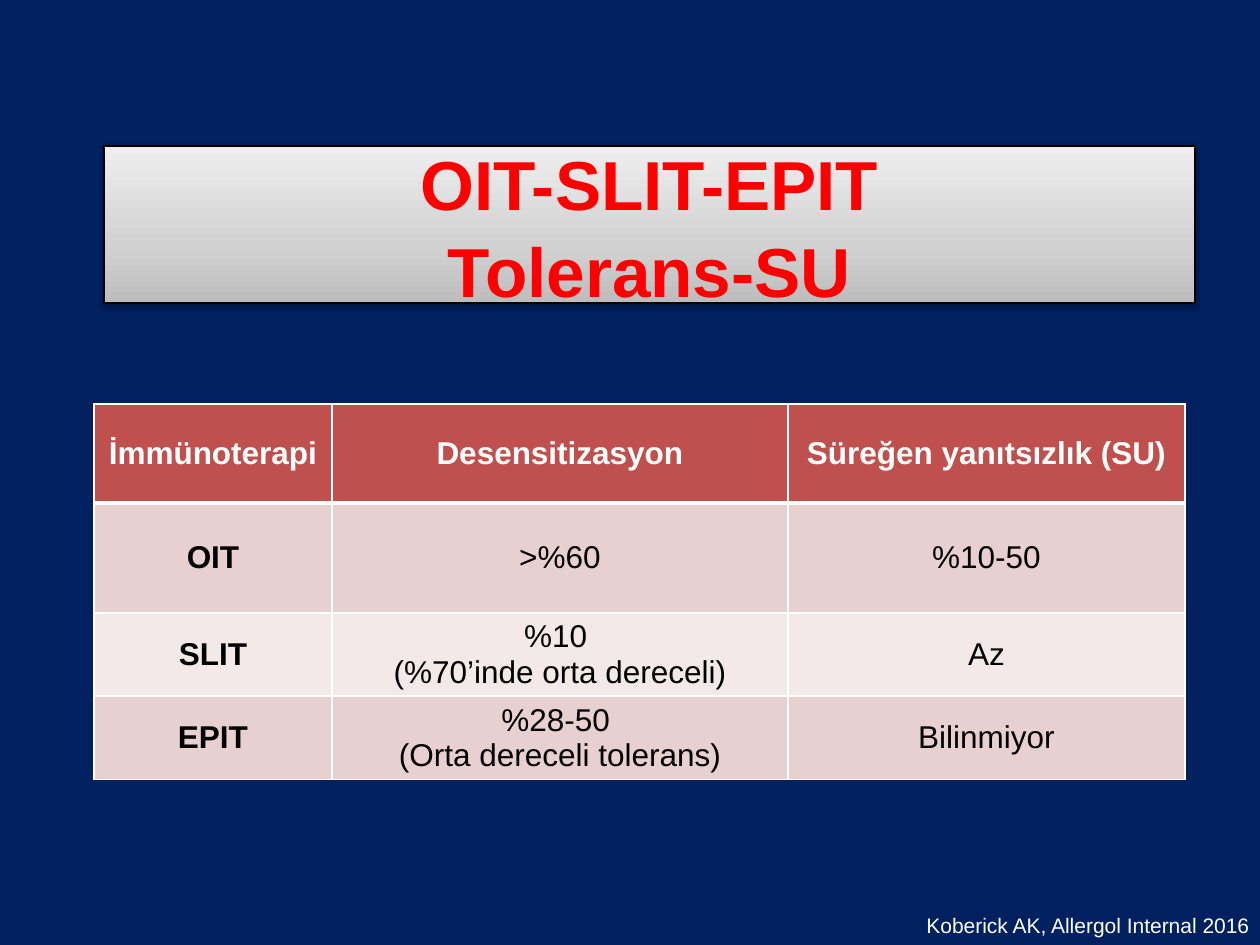
"""Build the slide on tolerance after OIT, SLIT and EPIT."""
import lxml.etree
import pptx
import pptx.dml.color
import pptx.enum.text
import pptx.oxml
import pptx.oxml.ns
import pptx.util

PX = 914400 // 126
CENTER = pptx.enum.text.PP_ALIGN.CENTER
MIDDLE = pptx.enum.text.MSO_ANCHOR.MIDDLE
WHITE, BLACK, RED, NAVY = "FFFFFF", "000000", "FF0000", "002060"
HEADER, BAND, LIGHT_BAND = "C0504D", "E8D0D0", "F4E9E9"


def color(value):
    return pptx.dml.color.RGBColor.from_string(value)


def element(tag, body="", **attributes):
    node = pptx.oxml.parse_xml(
        f"<a:{tag} {pptx.oxml.ns.nsdecls('a')}>{body}</a:{tag}>")
    for key, value in attributes.items():
        node.set(key, str(value))
    return node


def color_xml(value, inner=""):
    return f'<a:srgbClr val="{value}">{inner}</a:srgbClr>'


class Deck:
    def __init__(self, font, background):
        self.font = font
        self.presentation = pptx.Presentation()
        self.presentation.slide_width = pptx.util.Inches(10)
        self.presentation.slide_height = pptx.util.Inches(7.5)
        layout = self.presentation.slide_layouts[5]
        self.slide = self.presentation.slides.add_slide(layout)
        self.slide.background.fill.solid()
        self.slide.background.fill.fore_color.rgb = color(background)

    def set_text(self, frame, text, size, ink, bold=False, align=None):
        frame.text = text
        for paragraph in frame.paragraphs:
            paragraph.alignment = align
            font = paragraph.font
            font.name, font.size, font.bold = self.font, pptx.util.Pt(size), bold
            font.color.rgb = color(ink)

    def title(self, text, left, top, width, height, stops):
        banner = self.slide.shapes.title
        banner.left, banner.top = left * PX, top * PX
        banner.width, banner.height = width * PX, height * PX
        banner.fill.gradient()
        banner.fill.gradient_angle = 90
        stop_list = banner._element.spPr.find(".//" + pptx.oxml.ns.qn("a:gsLst"))
        stop_list[:] = [element("gs", color_xml(shade), pos=percent * 1000)
                        for percent, shade in stops]
        banner.line.color.rgb = color(BLACK)
        banner.line.width = pptx.util.Pt(0.75)
        shadow = color_xml(BLACK, '<a:alpha val="38000"/>')
        banner._element.spPr.append(element(
            "effectLst",
            f'<a:outerShdw blurRad="{pptx.util.Pt(3.1)}" dist="{pptx.util.Pt(1.6)}" '
            f'dir="5400000" rotWithShape="0">{shadow}</a:outerShdw>'))
        frame = banner.text_frame
        self.set_text(frame, text, 39.6, RED, bold=True, align=CENTER)
        frame.paragraphs[0].line_spacing = 1.04
        frame.vertical_anchor = MIDDLE
        frame.auto_size = pptx.enum.text.MSO_AUTO_SIZE.NONE

    def borders(self, cell, row):
        weights = {"L": 1, "R": 1, "T": 3 if row == 1 else 1, "B": 3 if row == 0 else 1}
        properties = cell._tc.get_or_add_tcPr()
        for position, (side, weight) in enumerate(weights.items()):
            fill = f"<a:solidFill>{color_xml(WHITE)}</a:solidFill>"
            properties.insert(position, element(f"ln{side}", fill, w=pptx.util.Pt(weight)))

    def table(self, rows, left, top, widths, heights):
        table = self.slide.shapes.add_table(
            len(rows), len(widths), left * PX, top * PX,
            sum(widths) * PX, sum(heights) * PX).table
        for column, width in zip(table.columns, widths):
            column.width = width * PX
        for r, (texts, height) in enumerate(zip(rows, heights)):
            table.rows[r].height = height * PX
            for c, text in enumerate(texts):
                cell = table.cell(r, c)
                cell.fill.solid()
                band = HEADER if r == 0 else BAND if r % 2 else LIGHT_BAND
                cell.fill.fore_color.rgb = color(band)
                cell.vertical_anchor = MIDDLE
                self.borders(cell, r)
                self.set_text(cell.text_frame, text, 18, BLACK if r else WHITE,
                              bold=r == 0 or c == 0, align=CENTER)

    def citation(self, text, left, top, width, height):
        box = self.slide.shapes.add_textbox(left * PX, top * PX, width * PX, height * PX)
        box.text_frame.word_wrap = False
        box.text_frame.auto_size = pptx.enum.text.MSO_AUTO_SIZE.SHAPE_TO_FIT_TEXT
        self.set_text(box.text_frame, text, 12, WHITE)


def main():
    deck = Deck("Arial", NAVY)
    deck.title("OIT-SLIT-EPIT\vTolerans-SU", 104, 146, 1091, 157,
               [(0, "BDBDBD"), (35, "D1D1D1"), (100, "EEEEEE")])
    therapies = [
        ("İmmünoterapi", "Desensitizasyon", "Süreğen yanıtsızlık (SU)"),
        ("OIT", ">%60", "%10-50"),
        ("SLIT", "%10 \n(%70’inde orta dereceli)", "Az"),
        ("EPIT", "%28-50 \n(Orta dereceli tolerans)", "Bilinmiyor"),
    ]
    deck.table(therapies, 94, 404, [238, 456, 397], [99, 110, 83, 83])
    deck.citation("Koberick AK, Allergol Internal 2016", 914, 906, 350, 38)
    deck.presentation.save("out.pptx")


if __name__ == "__main__":
    main()
